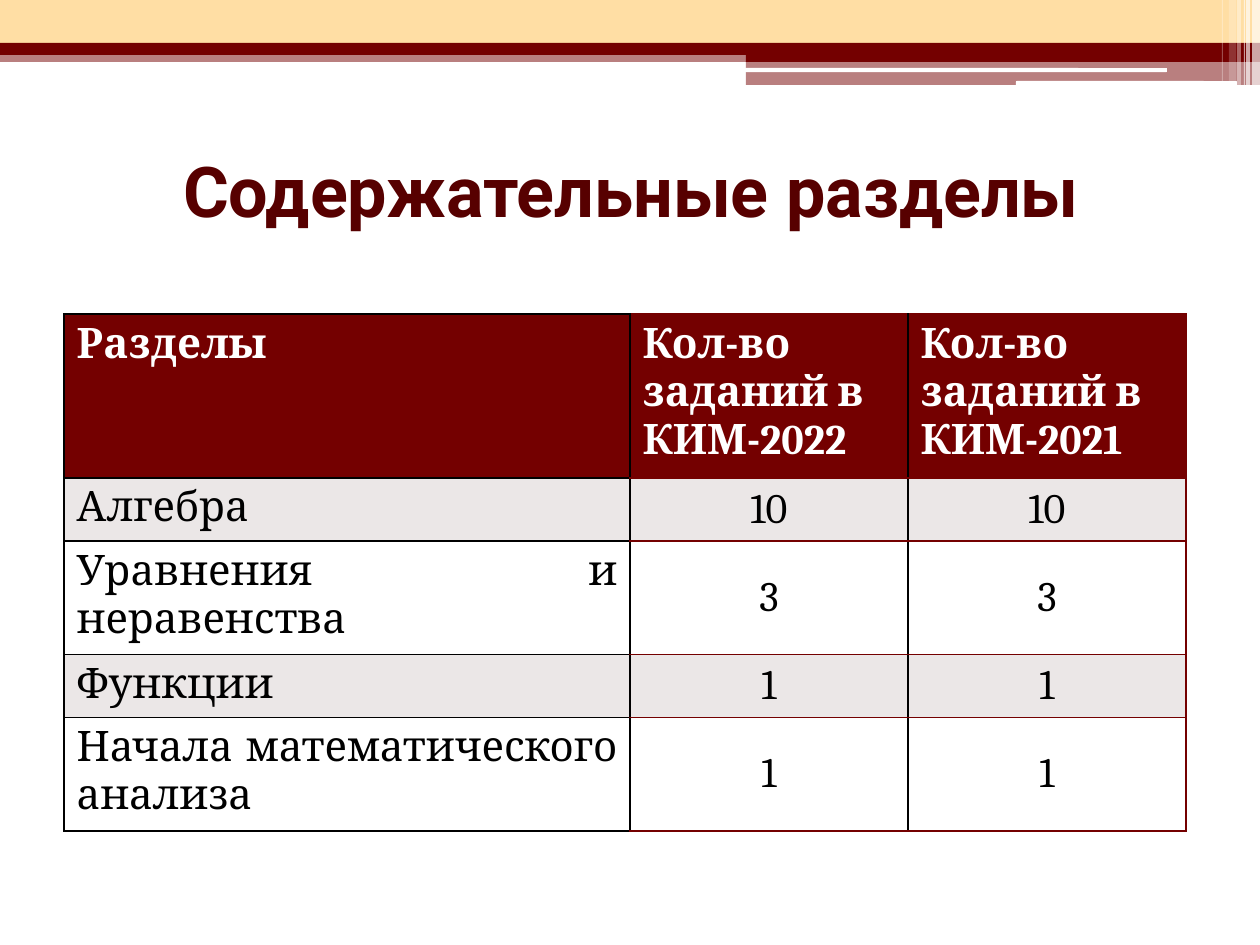
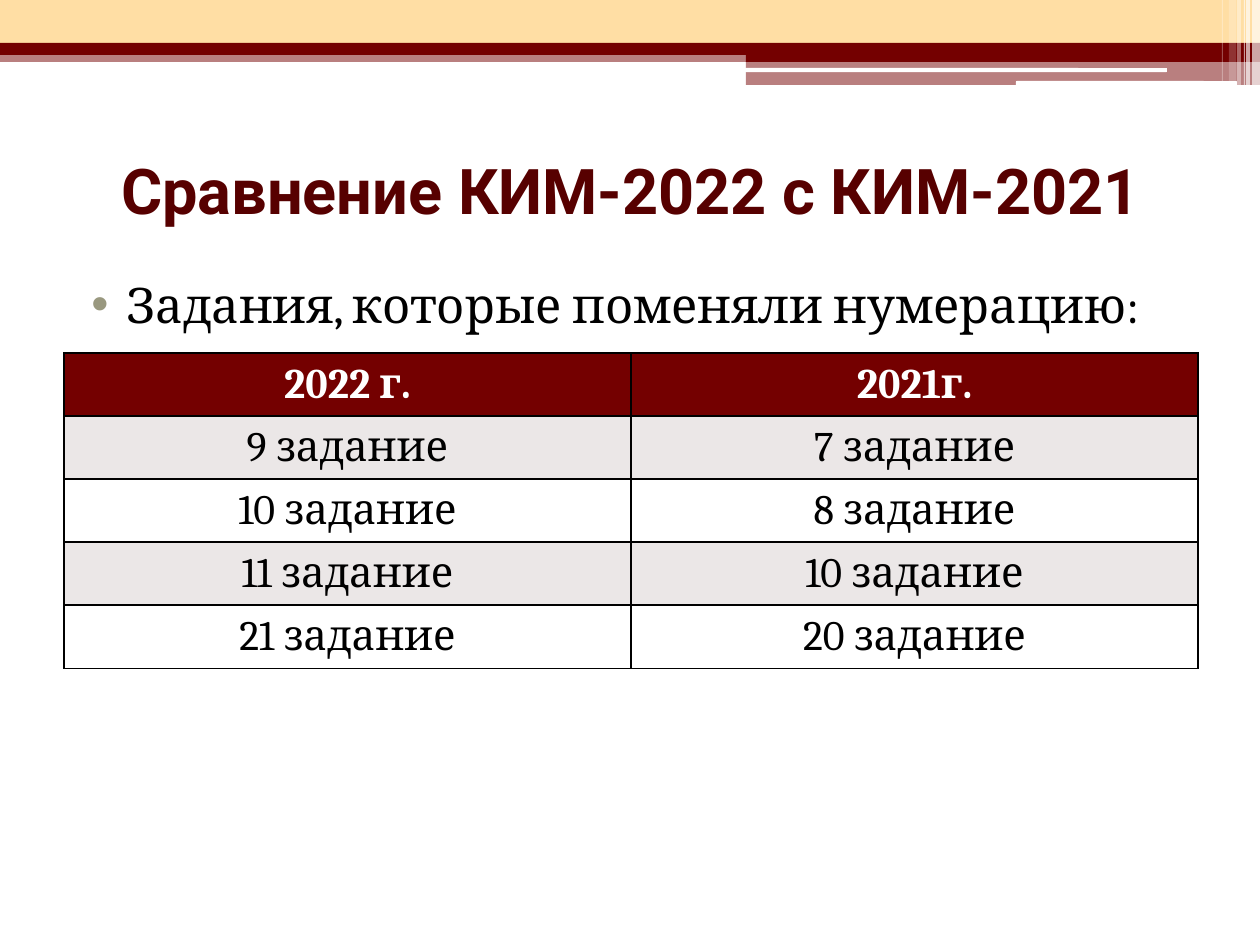
from dataclasses import dataclass

from lxml.etree import SubElement
from pptx import Presentation
from pptx.dml.color import RGBColor
from pptx.enum.shapes import MSO_SHAPE
from pptx.enum.text import MSO_ANCHOR, PP_ALIGN
from pptx.oxml.ns import qn
from pptx.presentation import Presentation as PresentationType
from pptx.slide import Slide
from pptx.table import _Cell
from pptx.text.text import TextFrame
from pptx.util import Emu, Pt

PIXELS_PER_INCH = 126
SLIDE_WIDTH, SLIDE_HEIGHT = 1260, 945

MAROON = RGBColor(0x74, 0x00, 0x00)
TITLE_MAROON = RGBColor(0x57, 0x00, 0x00)
CREAM = RGBColor(0xFF, 0xDE, 0xA4)
STRIPE_GREY = RGBColor(0xEB, 0xE7, 0xE7)
BULLET_OLIVE = RGBColor(0x99, 0x98, 0x7F)
WHITE = RGBColor(0xFF, 0xFF, 0xFF)
BLACK = RGBColor(0x00, 0x00, 0x00)

TITLE_FONT = "Roboto"
BODY_FONT = "Cambria"
TABLE_TEXT_SIZE = 24


@dataclass(frozen=True)
class Band:
    left: int
    top: int
    width: int
    height: int
    color: RGBColor
    opacity: int = 100
    shape_type: MSO_SHAPE = MSO_SHAPE.RECTANGLE


@dataclass(frozen=True)
class TableLayout:
    top: int
    column_widths: list[int]
    row_heights: list[int]
    rows: list[list[str]]
    has_label_column: bool = False
    left: int = 64


BANDS = [
    Band(0, 50, SLIDE_WIDTH, 12, MAROON, 50),
    Band(0, 0, SLIDE_WIDTH, 43, CREAM),
    Band(0, 43, SLIDE_WIDTH, 12, MAROON),
    Band(746, 49, 514, 13, MAROON),
    Band(746, 61, 514, 24, MAROON, 50),
    Band(745, 68, 422, 4, WHITE, shape_type=MSO_SHAPE.ROUNDED_RECTANGLE),
    Band(1016, 81, 221, 5, WHITE, shape_type=MSO_SHAPE.ROUNDED_RECTANGLE),
    Band(1252, 0, 8, 85, WHITE, 65),
    Band(1246, 0, 4, 85, WHITE, 65),
    Band(1244, 0, 1, 85, WHITE, 60),
    Band(1237, 0, 4, 85, WHITE, 40),
    Band(1229, 0, 7, 81, WHITE, 20),
    Band(1222, 0, 1, 81, WHITE, 30),
]

SECTIONS_TABLE = TableLayout(
    top=314,
    column_widths=[566, 278, 278],
    row_heights=[157, 61, 109, 61, 109],
    rows=[
        ["Разделы", "Кол-во\nзаданий в КИМ-2022", "Кол-во заданий в КИМ-2021"],
        ["Алгебра", "10", "10"],
        ["Уравнения и неравенства", "3", "3"],
        ["Функции", "1", "1"],
        ["Начала математического анализа", "1", "1"],
    ],
    has_label_column=True,
)

NUMBERING_TABLE = TableLayout(
    top=353,
    column_widths=[567, 567],
    row_heights=[61] * 5,
    rows=[
        ["2022 г.", "2021г."],
        ["9 задание", "7 задание"],
        ["10 задание", "8 задание"],
        ["11 задание", "10 задание"],
        ["21 задание", "20 задание"],
    ],
)


def px(length: int) -> Emu:
    return Emu(round(length * 914400 / PIXELS_PER_INCH))


def write_text(text_frame: TextFrame, text: str, font_name: str, size: int,
               color: RGBColor, alignment: PP_ALIGN, bold: bool = False) -> None:
    text_frame.text = text
    for paragraph in text_frame.paragraphs:
        paragraph.alignment = alignment
        for run in paragraph.runs:
            run.font.name = font_name
            run.font.size = Pt(size)
            run.font.bold = bold
            run.font.color.rgb = color


def add_band(slide: Slide, band: Band) -> None:
    shape = slide.shapes.add_shape(band.shape_type, px(band.left), px(band.top),
                                   px(band.width), px(band.height))
    shape.shadow.inherit = False
    shape.line.fill.background()
    shape.fill.solid()
    shape.fill.fore_color.rgb = band.color
    if band.opacity < 100:
        color_element = shape.fill._xPr.find(".//" + qn("a:srgbClr"))
        SubElement(color_element, qn("a:alpha"), val=str(band.opacity * 1000))


def add_text_box(slide: Slide, top: int, height: int) -> TextFrame:
    text_frame = slide.shapes.add_textbox(px(64), px(top), px(1134), px(height)).text_frame
    text_frame.word_wrap = True
    return text_frame


def add_titled_slide(presentation: PresentationType, title: str, title_size: int) -> Slide:
    slide = presentation.slides.add_slide(presentation.slide_layouts[6])
    for band in BANDS:
        add_band(slide, band)
    text_frame = add_text_box(slide, 116, 147)
    text_frame.vertical_anchor = MSO_ANCHOR.MIDDLE
    write_text(text_frame, title, TITLE_FONT, title_size, TITLE_MAROON,
               PP_ALIGN.CENTER, bold=True)
    return slide


def add_bullet_text(slide: Slide, text: str) -> None:
    text_frame = add_text_box(slide, 268, 596)
    write_text(text_frame, text, BODY_FONT, 28, BLACK, PP_ALIGN.JUSTIFY)
    paragraph = text_frame.paragraphs[0]
    paragraph.space_before = Pt(3)
    properties = paragraph._p.get_or_add_pPr()
    properties.set("marL", str(px(50)))
    properties.set("indent", str(px(-35)))
    bullet_color = SubElement(properties, qn("a:buClr"))
    SubElement(bullet_color, qn("a:srgbClr"), val=str(BULLET_OLIVE))
    SubElement(properties, qn("a:buFont"), typeface="Arial")
    SubElement(properties, qn("a:buChar"), char="•")


def set_borders(cell: _Cell, left: RGBColor, right: RGBColor, horizontal: RGBColor) -> None:
    properties = cell._tc.get_or_add_tcPr()
    for side, color in zip("LRTB", (left, right, horizontal, horizontal)):
        line = SubElement(properties, qn(f"a:ln{side}"), w=str(Pt(1)))
        fill = SubElement(line, qn("a:solidFill"))
        SubElement(fill, qn("a:srgbClr"), val=str(color))


def add_striped_table(slide: Slide, layout: TableLayout) -> None:
    """Draw a maroon header row above alternating grey and white rows."""
    table = slide.shapes.add_table(
        len(layout.rows), len(layout.column_widths), px(layout.left), px(layout.top),
        px(sum(layout.column_widths)), px(sum(layout.row_heights))).table
    for column, width in zip(table.columns, layout.column_widths):
        column.width = px(width)
    last_column = len(layout.column_widths) - 1

    for row_index, texts in enumerate(layout.rows):
        table.rows[row_index].height = px(layout.row_heights[row_index])
        is_header = row_index == 0
        row_color = MAROON if is_header else (WHITE, STRIPE_GREY)[row_index % 2]
        for column_index, text in enumerate(texts):
            cell = table.cell(row_index, column_index)
            is_count = layout.has_label_column and column_index > 0
            rule_color = MAROON if is_count else BLACK
            right_color = rule_color if column_index == last_column else BLACK
            set_borders(cell, BLACK, right_color, rule_color)
            cell.fill.solid()
            cell.fill.fore_color.rgb = row_color

            alignment, anchor = PP_ALIGN.CENTER, MSO_ANCHOR.MIDDLE
            if layout.has_label_column and (is_header or not is_count):
                alignment = PP_ALIGN.LEFT if is_header else PP_ALIGN.JUSTIFY
                anchor = MSO_ANCHOR.TOP
            cell.vertical_anchor = anchor
            write_text(cell.text_frame, text, BODY_FONT, TABLE_TEXT_SIZE,
                       WHITE if is_header else BLACK, alignment, bold=is_header)


def main() -> None:
    presentation = Presentation()
    presentation.slide_width = px(SLIDE_WIDTH)
    presentation.slide_height = px(SLIDE_HEIGHT)

    sections_slide = add_titled_slide(presentation, "Содержательные разделы", 40)
    add_striped_table(sections_slide, SECTIONS_TABLE)

    comparison_slide = add_titled_slide(presentation, "Сравнение КИМ-2022 с КИМ-2021", 36)
    add_bullet_text(comparison_slide, "Задания, которые поменяли нумерацию:")
    add_striped_table(comparison_slide, NUMBERING_TABLE)

    presentation.save("out.pptx")


if __name__ == "__main__":
    main()
